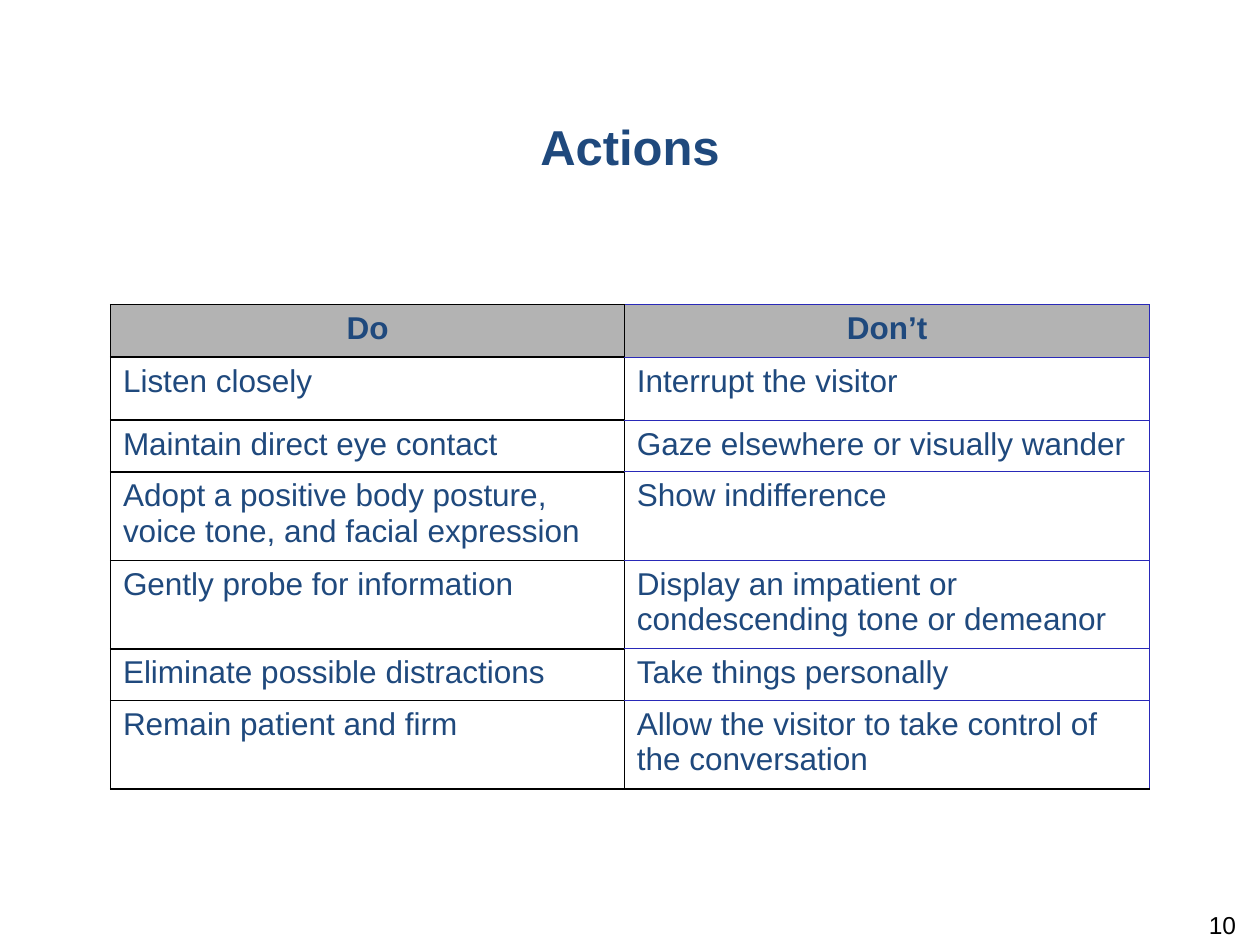
from lxml.etree import SubElement
from pptx import Presentation
from pptx.dml.color import RGBColor
from pptx.enum.text import MSO_ANCHOR as Anchor, PP_ALIGN as Align
from pptx.oxml.ns import qn
from pptx.util import Cm, Pt

NAVY, BLACK, BLUE, GREY = "1F497D", "000000", "2929B8", "B3B3B3"
COLUMN_WIDTHS = [10.36, 10.59]
ROW_HEIGHTS = [1.06, 1.27, 1.04, 1.78, 1.78, 1.04, 1.78]
ACTIONS = [
    ("Do", "Don’t"),
    ("Listen closely", "Interrupt the visitor"),
    ("Maintain direct eye contact", "Gaze elsewhere or visually wander"),
    ("Adopt a positive body posture, voice tone, and facial expression",
     "Show indifference"),
    ("Gently probe for information",
     "Display an impatient or condescending tone or demeanor"),
    ("Eliminate possible distractions", "Take things personally"),
    ("Remain patient and firm",
     "Allow the visitor to take control of the conversation"),
]


def rgb(value):
    return RGBColor.from_string(value)


def set_all(target, values):
    for name, value in values.items():
        setattr(target, name, value)


def write(frame, text, size, color, align, bold=False):
    para = frame.paragraphs[0]
    para.alignment = align
    span = para.add_run()
    span.text = text
    set_all(span.font, {"name": "Arial", "size": Pt(size), "bold": bold})
    span.font.color.rgb = rgb(color)


def add_label(page, place, text, size, color, align, bold=False, top_inset=0.13):
    box = page.shapes.add_textbox(*map(Cm, place))
    set_all(box.text_frame, {
        "word_wrap": True, "vertical_anchor": Anchor.TOP,
        "margin_left": Cm(0.25), "margin_right": Cm(0.25),
        "margin_top": Cm(top_inset), "margin_bottom": Cm(0.13)})
    write(box.text_frame, text, size, color, align, bold)


def set_borders(cell, borders):
    """Draw cell edges from (side, color, points) in the order L, R, T, B."""
    properties = cell._tc.get_or_add_tcPr()
    for side, color, points in borders:
        line = SubElement(properties, qn(f"a:ln{side}"), w=str(Pt(points)))
        fill = SubElement(line, qn("a:solidFill"))
        SubElement(fill, qn("a:srgbClr"), val=color)


def cell_borders(row, column):
    black, blue = (BLACK, 1), (BLUE, 0.75)
    outer = black if column == 0 else blue
    bottom = black if row == len(ACTIONS) - 1 else outer
    return [("L", *black), ("R", *outer), ("T", *outer), ("B", *bottom)]


def fill_cell(cell, text, row, column):
    header = row == 0
    set_all(cell, {
        "margin_left": Cm(0.25), "margin_right": Cm(0.25),
        "margin_top": Cm(0.13), "margin_bottom": Cm(0.13),
        "vertical_anchor": Anchor.TOP})
    write(cell.text_frame, text, 18, NAVY,
          Align.CENTER if header else Align.LEFT, header)
    set_borders(cell, cell_borders(row, column))
    if header:
        cell.fill.solid()
        cell.fill.fore_color.rgb = rgb(GREY)
    else:
        cell.fill.background()


def add_actions_table(page):
    table = page.shapes.add_table(
        len(ROW_HEIGHTS), len(COLUMN_WIDTHS), Cm(2.23), Cm(6.14),
        Cm(sum(COLUMN_WIDTHS)), Cm(sum(ROW_HEIGHTS))).table
    table.horz_banding = False
    for column, width in zip(table.columns, COLUMN_WIDTHS):
        column.width = Cm(width)
    for row, height in zip(table.rows, ROW_HEIGHTS):
        row.height = Cm(height)
    for row, texts in enumerate(ACTIONS):
        for column, text in enumerate(texts):
            fill_cell(table.cell(row, column), text, row, column)


def main():
    deck = Presentation()
    set_all(deck, {"slide_width": Cm(25.4), "slide_height": Cm(19.05)})
    page = deck.slides.add_slide(deck.slide_layouts[6])
    add_label(page, (0, 2.21, 25.4, 3.02), "Actions", 28, NAVY, Align.CENTER, bold=True)
    add_label(page, (19.25, 18.34, 5.92, 1.02), "10", 14, BLACK, Align.RIGHT, top_inset=0)
    add_actions_table(page)
    deck.save("out.pptx")


if __name__ == "__main__":
    main()
